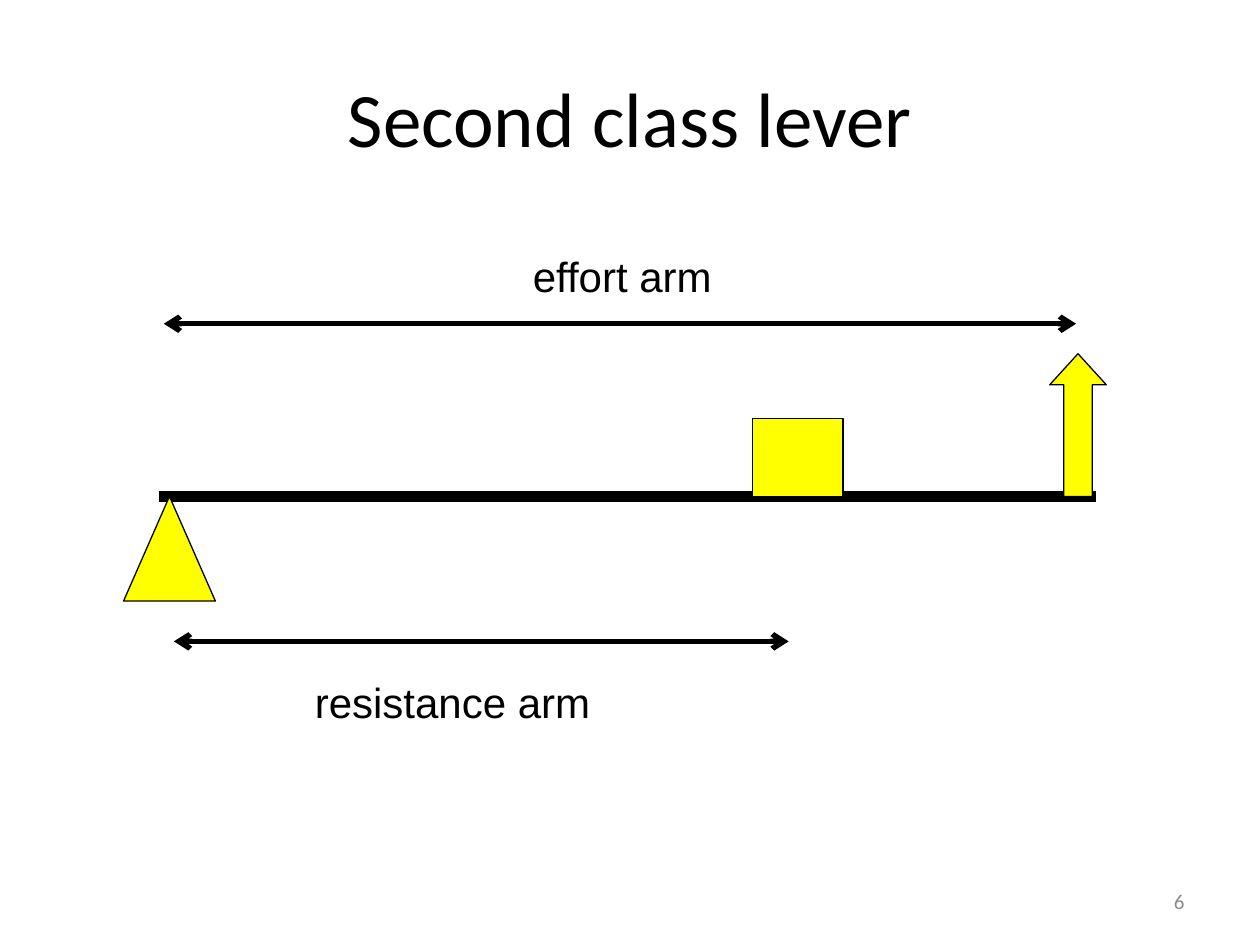
import pptx
import pptx.util
import pptx.dml.color
import pptx.enum.shapes
import pptx.enum.text
import pptx.oxml

Pt = pptx.util.Pt
MSO_SHAPE = pptx.enum.shapes.MSO_SHAPE
STRAIGHT = pptx.enum.shapes.MSO_CONNECTOR.STRAIGHT
PP_ALIGN = pptx.enum.text.PP_ALIGN
MIDDLE = pptx.enum.text.MSO_ANCHOR.MIDDLE
BLACK, YELLOW, GREY = "000000", "FFFF00", "8C8C8C"


def rgb(value):
    return pptx.dml.color.RGBColor.from_string(value)


def style_text(frame, text, font, size, color, align):
    frame.text = text
    paragraph = frame.paragraphs[0]
    paragraph.alignment = align
    for run in paragraph.runs:
        run.font.name = font
        run.font.size = Pt(size)
        run.font.color.rgb = rgb(color)


def add_line(shapes, x1, x2, y, weight, arrows=False):
    """Horizontal black line, with open arrowheads at both ends if asked."""
    line = shapes.add_connector(STRAIGHT, Pt(x1), Pt(y), Pt(x2), Pt(y))
    line.line.color.rgb = rgb(BLACK)
    line.line.width = Pt(weight)
    if arrows:
        outline = line.line._get_or_add_ln()
        for end in ("a:headEnd", "a:tailEnd"):
            pptx.oxml.xmlchemy.OxmlElement
            mark = pptx.oxml.xmlchemy.OxmlElement(end)
            mark.set("type", "arrow")
            outline.append(mark)
    line._element.spPr.append(pptx.oxml.xmlchemy.OxmlElement("a:effectLst"))


def add_part(shapes, kind, left, top, width, height):
    part = shapes.add_shape(kind, Pt(left), Pt(top), Pt(width), Pt(height))
    part.shadow.inherit = False
    part.fill.solid()
    part.fill.fore_color.rgb = rgb(YELLOW)
    part.line.color.rgb = rgb(BLACK)
    part.line.width = Pt(0.75)
    return part


def add_title(slide, left, top, width, height):
    title = slide.shapes.title
    title.left, title.top = Pt(left), Pt(top)
    title.width, title.height = Pt(width), Pt(height)
    title.text_frame.vertical_anchor = MIDDLE
    style_text(title.text_frame, "Second class lever", "Calibri", 44, BLACK,
               PP_ALIGN.CENTER)


def add_lever(slide, left, top, width, height):
    """Beam with the fulcrum, effort and load, grouped."""
    lever = slide.shapes.add_group_shape().shapes
    fulcrum_height, effort_width = 59.8, 32.4
    beam_y = top + height - fulcrum_height
    add_line(lever, left + 20.2, left + width - 6, beam_y, 6)
    # Fulcrum
    add_part(lever, MSO_SHAPE.ISOSCELES_TRIANGLE, left, beam_y, 52.5,
             fulcrum_height)
    # Effort
    effort = add_part(lever, MSO_SHAPE.UP_ARROW, left + width - effort_width,
                      top, effort_width, beam_y - top)
    effort.adjustments[0] = 0.5
    effort.adjustments[1] = 0.55
    # Load
    load_height = 44.6
    add_part(lever, MSO_SHAPE.RECTANGLE, left + 359.3, beam_y - load_height,
             51.8, load_height)


def add_arm(slide, left, y, length, name, label_left, label_top, label_width):
    """Double-headed arrow with its label, placed relative to the arrow."""
    add_line(slide.shapes, left, left + length, y, 3, arrows=True)
    label = slide.shapes.add_textbox(Pt(left + label_left), Pt(y + label_top),
                                     Pt(label_width), Pt(36))
    label.text_frame.word_wrap = False
    label.text_frame.auto_size = pptx.enum.text.MSO_AUTO_SIZE.SHAPE_TO_FIT_TEXT
    style_text(label.text_frame, name, "Arial", 24, BLACK, PP_ALIGN.LEFT)


def add_page_number(slide, left, top, width, height):
    number = slide.shapes.add_textbox(Pt(left), Pt(top), Pt(width), Pt(height))
    number.text_frame.word_wrap = True
    number.text_frame.vertical_anchor = MIDDLE
    style_text(number.text_frame, "6", "Calibri", 12, GREY, PP_ALIGN.RIGHT)


def main():
    deck = pptx.Presentation()
    deck.slide_width, deck.slide_height = Pt(720), Pt(540)
    slide = deck.slides.add_slide(deck.slide_layouts[5])
    add_page_number(slide, 516, 500.5, 168, 28.8)
    add_title(slide, 36, 21.6, 648, 90)
    add_lever(slide, 70.6, 202.1, 561.6, 141.4)
    add_arm(slide, 93.6, 185, 521.3, "effort arm", 203.8, -45.3, 117.4)
    add_arm(slide, 99.4, 366.5, 351.3, "resistance arm", 73.4, 16.5, 172.1)
    deck.save("out.pptx")


if __name__ == "__main__":
    main()
